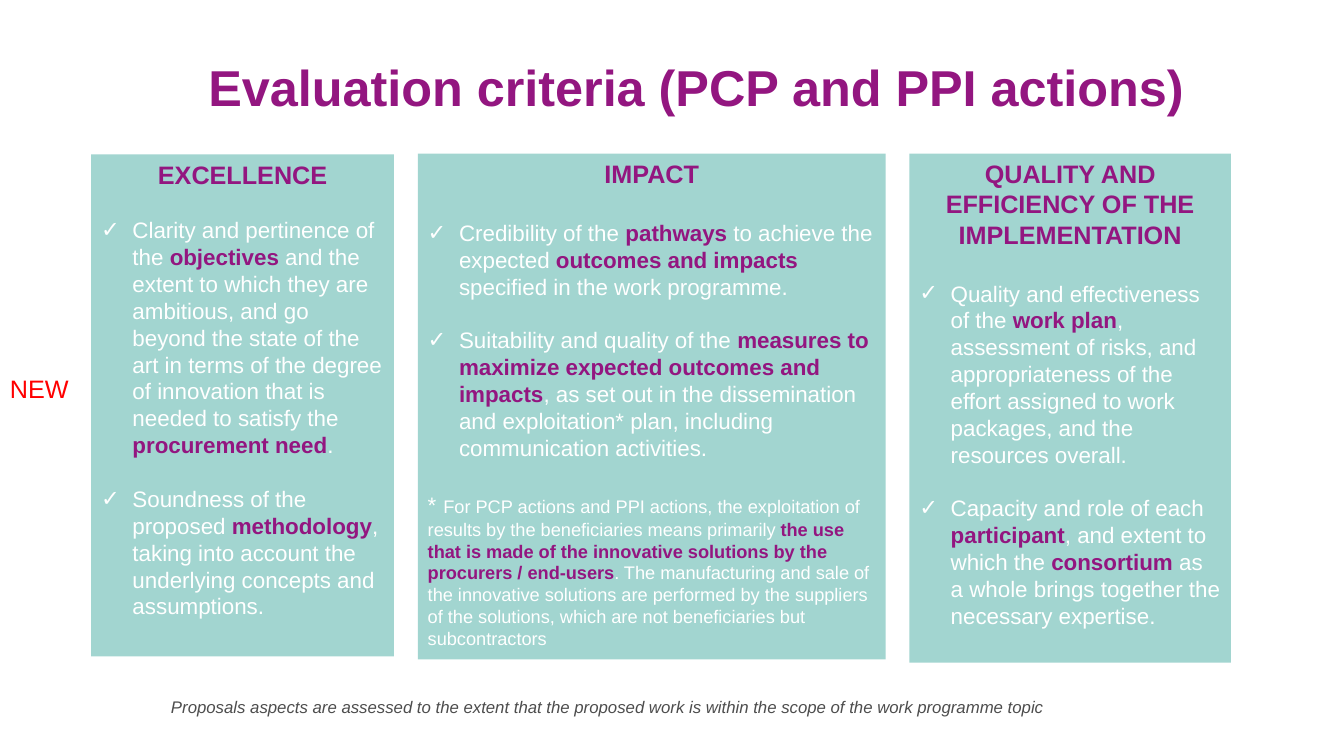
from lxml.etree import SubElement
from pptx import Presentation
from pptx.dml.color import RGBColor
from pptx.enum.shapes import MSO_SHAPE
from pptx.enum.text import MSO_ANCHOR, PP_ALIGN
from pptx.oxml.ns import qn
from pptx.util import Cm, Pt

COLOURS = {"accent": "931680", "panel": "A2D5D0", "light": "FFFFFF",
           "caption": "4D4D4D", "alert": "FF0000"}
HEADING_SIZE, BULLET_SIZE, FOOTNOTE_SIZE = 18, 16, 13
HEADING_GAP, BULLET_GAP = 21.7, 19.2

CRITERIA = [
    {"heading": "EXCELLENCE", "area": (2.3, 3.89, 7.63, 12.65), "gap": BULLET_GAP,
     "bullets": [
         ["Clarity and pertinence of the ", "objectives",
          " and the extent to which they are ambitious, and go beyond the state of the art "
          "in terms of the degree of innovation that is needed to satisfy the ",
          "procurement need", "."],
         ["Soundness of the proposed ", "methodology",
          ", taking into account the underlying concepts and assumptions."]]},
    {"heading": "IMPACT", "area": (10.53, 3.87, 11.79, 12.75), "gap": HEADING_GAP,
     "bullets": [
         ["Credibility of the ", "pathways", " to achieve the expected ",
          "outcomes and impacts ", "specified in the work programme."],
         ["Suitability and quality of the ",
          "measures to maximize expected outcomes and impacts",
          ", as set out in the dissemination and exploitation* plan, "
          "including communication activities."]],
     "footnote": [
         "For PCP actions and PPI actions, the exploitation of results by the "
         "beneficiaries means primarily ",
         "the use that is made of the innovative solutions by the procurers / end-users",
         ". The manufacturing and sale of the innovative solutions are performed by the "
         "suppliers of the solutions, which are not beneficiaries but subcontractors"]},
    {"heading": "QUALITY AND EFFICIENCY OF THE IMPLEMENTATION",
     "area": (22.92, 3.87, 8.1, 12.83), "gap": HEADING_GAP,
     "bullets": [
         ["Quality and effectiveness of the ", "work plan",
          ", assessment of risks, and appropriateness of the effort assigned to work "
          "packages, and the resources overall."],
         ["Capacity and role of each ", "participant", ", and extent to which the ",
          "consortium", " as a whole brings together the necessary expertise."]]},
]


class CriteriaPage:
    """Draws the elements of one slide in a shared style."""

    def __init__(self, deck, font="Arial"):
        self.page = deck.slides.add_slide(deck.slide_layouts[6])
        self.font = font

    def colour(self, name):
        return RGBColor.from_string(COLOURS[name])

    def span(self, para, text, size, colour, bold=False, italic=False):
        span = para.add_run()
        span.text = text
        span.font.name = self.font
        span.font.size = Pt(size)
        span.font.bold = bold
        span.font.italic = italic
        span.font.color.rgb = self.colour(colour)

    def spans(self, para, texts, size):
        for index, text in enumerate(texts):
            strong = index % 2 == 1
            self.span(para, text, size, "accent" if strong else "light", bold=strong)

    def label(self, area, text, size, colour, wrap=True, **style):
        box = self.page.shapes.add_textbox(*map(Cm, area))
        box.text_frame.word_wrap = wrap
        self.span(box.text_frame.paragraphs[0], text, size, colour, **style)

    def paragraph(self, frame, gap):
        para = frame.add_paragraph()
        para.alignment = PP_ALIGN.LEFT
        para.space_before = Pt(gap)
        return para

    def bullet(self, frame, texts, gap):
        para = self.paragraph(frame, gap)
        properties = para._p.get_or_add_pPr()
        properties.set("marL", str(Cm(0.79)))
        properties.set("indent", str(-Cm(0.79)))
        SubElement(properties, qn("a:buFont")).set("typeface", self.font)
        SubElement(properties, qn("a:buChar")).set("char", "✓")
        self.spans(para, texts, BULLET_SIZE)

    def footnote(self, frame, texts):
        para = self.paragraph(frame, BULLET_GAP)
        self.span(para, "*", BULLET_SIZE, "light")
        self.span(para, " ", HEADING_SIZE, "light")
        self.spans(para, texts, FOOTNOTE_SIZE)

    def panel(self, heading, area, gap, bullets, footnote=None):
        box = self.page.shapes.add_shape(MSO_SHAPE.RECTANGLE, *map(Cm, area))
        box.shadow.inherit = False
        box.fill.solid()
        box.fill.fore_color.rgb = self.colour("panel")
        box.line.fill.background()
        frame = box.text_frame
        frame.word_wrap = True
        frame.vertical_anchor = MSO_ANCHOR.TOP
        title = frame.paragraphs[0]
        title.alignment = PP_ALIGN.CENTER
        self.span(title, heading, HEADING_SIZE, "accent", bold=True)
        for index, texts in enumerate(bullets):
            self.bullet(frame, texts, BULLET_GAP if index else gap)
        if footnote:
            self.footnote(frame, footnote)


def main():
    deck = Presentation()
    deck.slide_width, deck.slide_height = Cm(33.87), Cm(19.05)
    page = CriteriaPage(deck)
    page.label((5, 1.3, 26.77, 1.32), "Evaluation criteria (PCP and PPI actions)",
               36, "accent", bold=True)
    for criterion in CRITERIA:
        page.panel(**criterion)
    page.label((4.06, 17.43, 22.63, 0.76),
               "Proposals aspects are assessed to the extent that the proposed work "
               "is within the scope of the work programme topic",
               12, "caption", italic=True)
    page.label((0, 9.27, 2.01, 1.02), "NEW", 18, "alert", wrap=False)
    deck.save("out.pptx")


if __name__ == "__main__":
    main()
